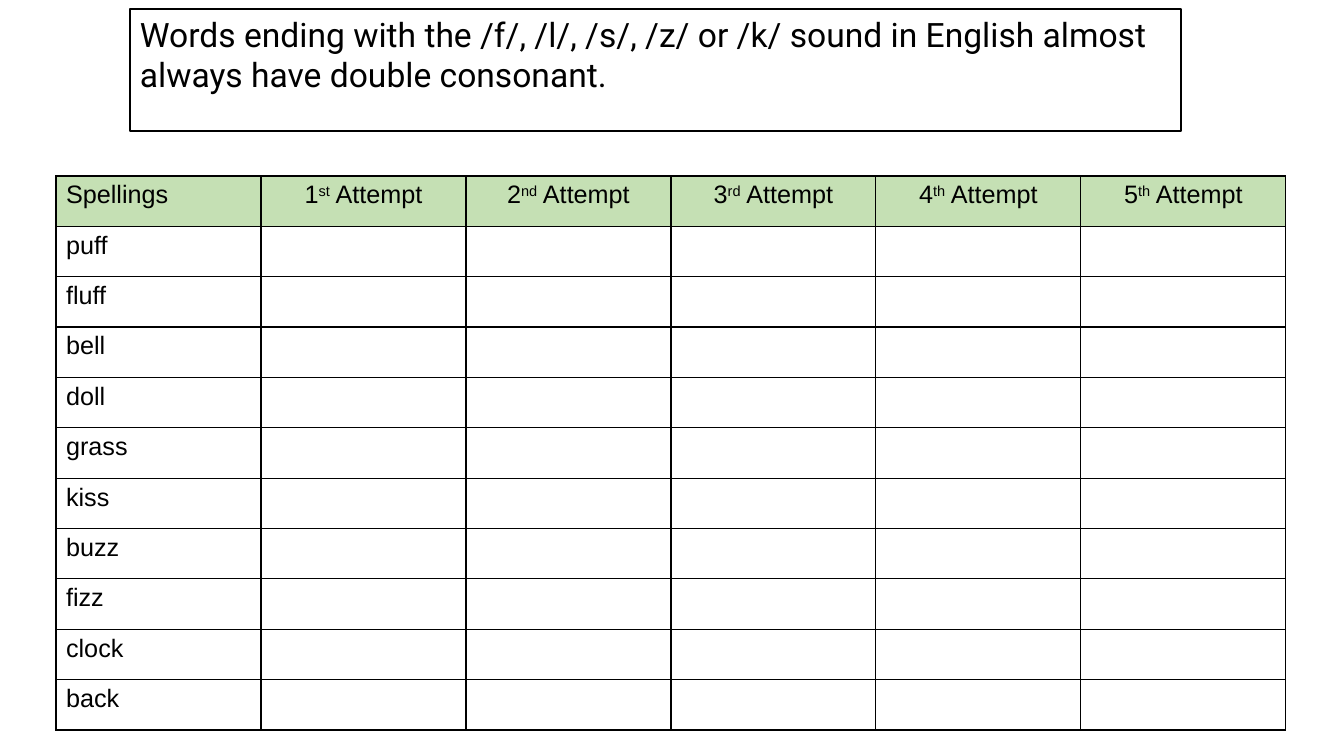
from dataclasses import dataclass

from lxml import etree
from pptx import Presentation
from pptx.dml.color import RGBColor
from pptx.enum.shapes import MSO_SHAPE
from pptx.enum.text import MSO_ANCHOR, PP_ALIGN
from pptx.oxml.ns import qn
from pptx.util import Pt

RULE = (
    "Words ending with the /f/, /l/, /s/, /z/ or /k/ sound in English "
    "almost always have double consonant."
)
WORD_HEADING = "Spellings"
ATTEMPTS = [("1", "st"), ("2", "nd"), ("3", "rd"), ("4", "th"), ("5", "th")]
WORDS = ["puff", "fluff", "bell", "doll", "grass",
         "kiss", "buzz", "fizz", "clock", "back"]

PX = 914400 / 100.8
SLIDE_SIZE = (1344, 756)
RULE_BOX = (130, 9, 1051, 122)
TABLE_BOX = (56, 176, 1230, 554)

RECTANGLE = MSO_SHAPE.RECTANGLE
TOP = MSO_ANCHOR.TOP
LEFT = PP_ALIGN.LEFT
CENTER = PP_ALIGN.CENTER


@dataclass(frozen=True)
class Theme:
    ink: str = "000000"
    paper: str = "FFFFFF"
    header: str = "C5E0B4"
    rule_font: str = "Roboto"
    table_font: str = "Arial"
    rule_size: int = 24
    table_size: int = 18
    line_width: int = 1


THEME = Theme()


def emu(pixels):
    return round(pixels * PX)


def color(value):
    return RGBColor.from_string(value)


def format_font(font, name, size):
    font.name = name
    font.size = Pt(size)
    font.color.rgb = color(THEME.ink)


def add_rule(slide):
    shape = slide.shapes.add_shape(RECTANGLE, *map(emu, RULE_BOX))
    shape.shadow.inherit = False
    shape.fill.solid()
    shape.fill.fore_color.rgb = color(THEME.paper)
    shape.line.color.rgb = color(THEME.ink)
    shape.line.width = Pt(THEME.line_width)
    text_frame = shape.text_frame
    text_frame.word_wrap = True
    text_frame.vertical_anchor = TOP
    text_frame.text = RULE
    paragraph = text_frame.paragraphs[0]
    paragraph.alignment = LEFT
    format_font(paragraph.runs[0].font, THEME.rule_font, THEME.rule_size)


def add_borders(cell):
    properties = cell._tc.get_or_add_tcPr()
    for position, side in enumerate(("a:lnL", "a:lnR", "a:lnT", "a:lnB")):
        line = etree.Element(qn(side), w=str(Pt(THEME.line_width)))
        fill = etree.SubElement(line, qn("a:solidFill"))
        etree.SubElement(fill, qn("a:srgbClr"), val=THEME.ink)
        properties.insert(position, line)


def fill_attempt_heading(paragraph, number, suffix):
    paragraph.alignment = CENTER
    for text in (number, suffix, " Attempt"):
        run = paragraph.add_run()
        run.text = text
        if text == suffix:
            run.font._element.set("baseline", "30000")


def add_spelling_table(slide):
    row_count, column_count = len(WORDS) + 1, len(ATTEMPTS) + 1
    table = slide.shapes.add_table(
        row_count, column_count, *map(emu, TABLE_BOX)).table
    table.first_row = False
    table.horz_banding = False

    for row, text in enumerate([WORD_HEADING, *WORDS]):
        table.cell(row, 0).text_frame.text = text
    for column, (number, suffix) in enumerate(ATTEMPTS, start=1):
        paragraph = table.cell(0, column).text_frame.paragraphs[0]
        fill_attempt_heading(paragraph, number, suffix)

    for index, cell in enumerate(table.iter_cells()):
        if index < column_count:
            cell.fill.solid()
            cell.fill.fore_color.rgb = color(THEME.header)
        else:
            cell.fill.background()
        add_borders(cell)
        for run in cell.text_frame.paragraphs[0].runs:
            format_font(run.font, THEME.table_font, THEME.table_size)


def main():
    presentation = Presentation()
    presentation.slide_width, presentation.slide_height = map(emu, SLIDE_SIZE)
    slide = presentation.slides.add_slide(presentation.slide_layouts[6])
    add_spelling_table(slide)
    add_rule(slide)
    presentation.save("out.pptx")


if __name__ == "__main__":
    main()
